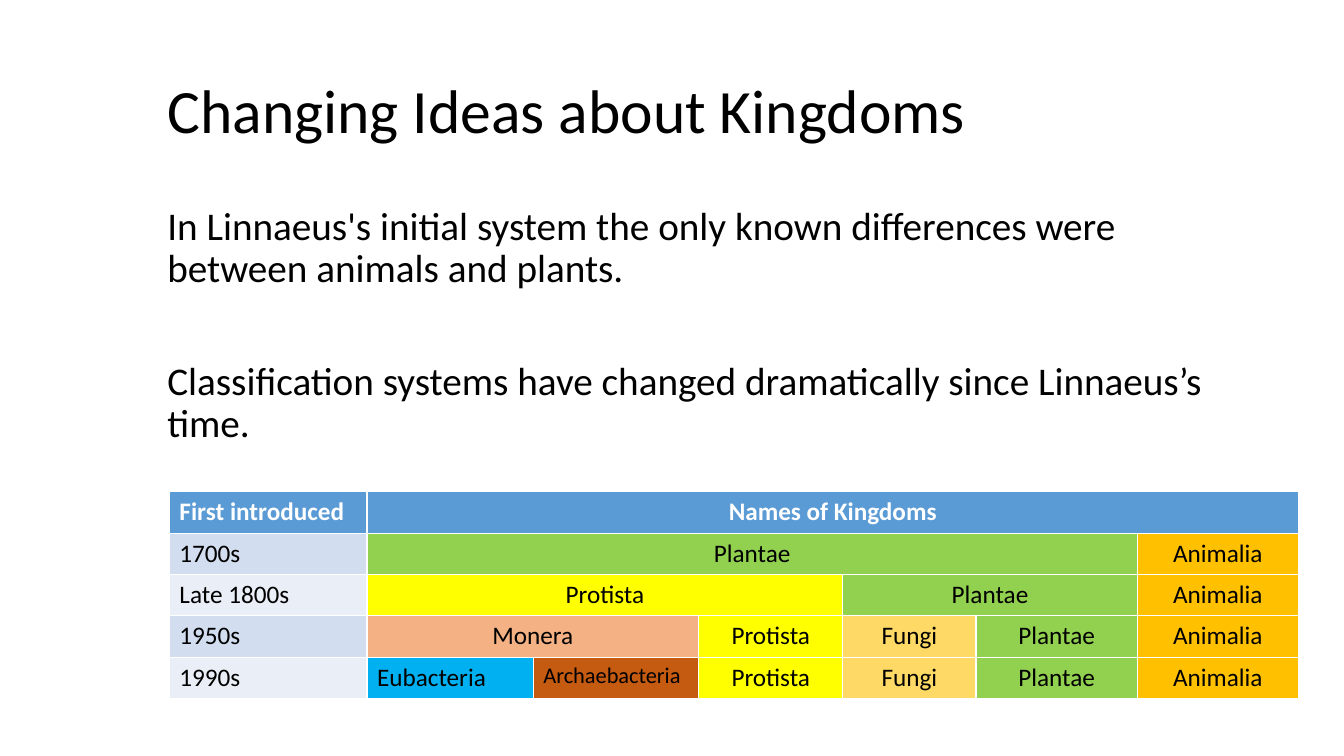
from pptx import Presentation
from pptx.dml.color import RGBColor
from pptx.enum.text import MSO_ANCHOR as Anchor, MSO_AUTO_SIZE as AutoSize, PP_ALIGN as Align
from pptx.oxml.xmlchemy import OxmlElement
from pptx.util import Inches, Pt

COLUMN_WIDTHS = [1.96, 1.65, 1.64, 1.43, 1.32, 1.6, 1.6]
ROW_HEIGHT = 0.41
HEADER_FILL = "5B9BD5"
BAND_FILLS = ["D2DEEF", "EAEFF7"]
KINGDOM_FILLS = {
    "Plantae": "92D050",
    "Animalia": "FFC000",
    "Protista": "FFFF00",
    "Monera": "F4B183",
    "Fungi": "FFD966",
    "Eubacteria": "00B0F0",
    "Archaebacteria": "C55A11",
}
SYSTEMS = [
    ("1700s", [("Plantae", 5), ("Animalia", 1)]),
    ("Late 1800s", [("Protista", 3), ("Plantae", 2), ("Animalia", 1)]),
    ("1950s", [("Monera", 2), ("Protista", 1), ("Fungi", 1), ("Plantae", 1), ("Animalia", 1)]),
    ("1990s", [("Eubacteria", 1), ("Archaebacteria", 1), ("Protista", 1), ("Fungi", 1),
               ("Plantae", 1), ("Animalia", 1)]),
]


def rgb(color):
    """Return the colour for a hex string."""
    return RGBColor.from_string(color)


def write(paragraph, text, size=18, color="000000", bold=False, align=Align.LEFT,
          line_spacing=1.0, space_before=0):
    """Put formatted text into a paragraph."""
    paragraph.text = text
    paragraph.alignment = align
    paragraph.line_spacing = line_spacing
    paragraph.space_before = Pt(space_before)
    font = paragraph.font
    font.name, font.size, font.bold = "Calibri", Pt(size), bold
    font.color.rgb = rgb(color)


def remove_bullet(paragraph):
    """Turn off the bullet and the hanging indent of a paragraph."""
    properties = paragraph._p.get_or_add_pPr()
    properties.set("marL", "0")
    properties.set("indent", "0")
    properties.append(OxmlElement("a:buNone"))


def place(placeholder, left, top, width, height, anchor):
    """Move a placeholder and return its text frame."""
    placeholder.left, placeholder.top = Inches(left), Inches(top)
    placeholder.width, placeholder.height = Inches(width), Inches(height)
    frame = placeholder.text_frame
    frame.auto_size = AutoSize.NONE
    frame.word_wrap = True
    frame.vertical_anchor = anchor
    return frame


def add_body(placeholder, texts, gap):
    """Fill the body placeholder with plain paragraphs set apart by a gap."""
    frame = place(placeholder, 1.56, 2, 10.85, 4.76, Anchor.TOP)
    for index, text in enumerate(texts):
        paragraph = frame.add_paragraph() if index else frame.paragraphs[0]
        remove_bullet(paragraph)
        write(paragraph, text, size=28, line_spacing=0.9, space_before=gap if index else 0)


def fill_cell(table, row, column, text, fill, span=1, **text_format):
    """Fill one table cell, merged over the columns it spans."""
    cell = table.cell(row, column)
    if span > 1:
        cell.merge(table.cell(row, column + span - 1))
    cell.fill.solid()
    cell.fill.fore_color.rgb = rgb(fill)
    write(cell.text_frame.paragraphs[0], text, **text_format)


def add_kingdom_table(slide):
    """Add the table of kingdoms known in each period."""
    row_count = len(SYSTEMS) + 1
    table = slide.shapes.add_table(
        row_count, len(COLUMN_WIDTHS), Inches(1.68), Inches(4.88),
        Inches(sum(COLUMN_WIDTHS)), Inches(ROW_HEIGHT * row_count)).table
    for column, width in zip(table.columns, COLUMN_WIDTHS):
        column.width = Inches(width)
    for row in table.rows:
        row.height = Inches(ROW_HEIGHT)

    header = {"color": "FFFFFF", "bold": True}
    fill_cell(table, 0, 0, "First introduced", HEADER_FILL, **header)
    fill_cell(table, 0, 1, "Names of Kingdoms", HEADER_FILL, span=6, align=Align.CENTER, **header)
    for row, (period, kingdoms) in enumerate(SYSTEMS, start=1):
        fill_cell(table, row, 0, period, BAND_FILLS[(row - 1) % 2])
        column = 1
        for name, span in kingdoms:
            fill_cell(table, row, column, name, KINGDOM_FILLS[name], span=span,
                      size=16 if name == "Archaebacteria" else 18,
                      align=Align.LEFT if name.endswith("bacteria") else Align.CENTER)
            column += span


def main():
    """Build the slide and save it."""
    presentation = Presentation()
    presentation.slide_width, presentation.slide_height = Inches(13.33), Inches(7.5)
    slide = presentation.slides.add_slide(presentation.slide_layouts[1])
    title = place(slide.shapes.title, 1.56, 0.4, 10.85, 1.45, Anchor.MIDDLE)
    write(title.paragraphs[0], "Changing Ideas about Kingdoms", size=44, line_spacing=0.9)
    add_body(slide.placeholders[1], [
        "In Linnaeus's initial system the only known differences were between animals and plants.",
        "Classification systems have changed dramatically since Linnaeus’s time.",
    ], gap=50)
    add_kingdom_table(slide)
    presentation.save("out.pptx")


if __name__ == "__main__":
    main()
